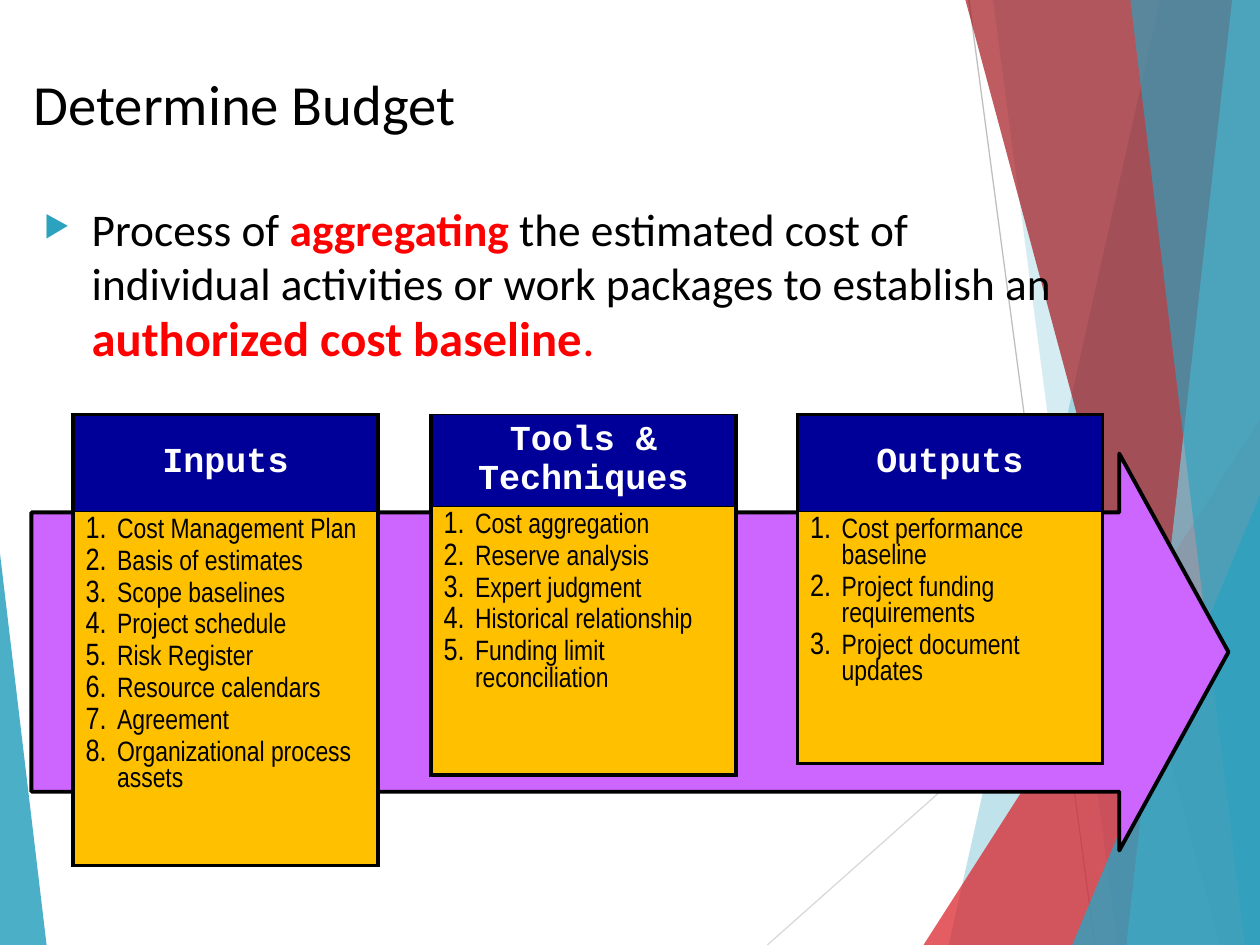
from dataclasses import dataclass

from lxml.etree import SubElement
from pptx import Presentation
from pptx.dml.color import RGBColor
from pptx.enum.shapes import MSO_CONNECTOR as Connector, MSO_SHAPE as Shape
from pptx.enum.text import MSO_ANCHOR as Anchor, PP_ALIGN as Align
from pptx.oxml.ns import qn
from pptx.util import Inches, Pt


@dataclass(frozen=True)
class Theme:
    black: str = "000000"
    white: str = "FFFFFF"
    emphasis: str = "FF0000"
    teal: str = "2DA2BF"
    pale_teal: str = "7ACBE0"
    red: str = "DA1F28"
    dark_red: str = "A3171E"
    gray: str = "BFBFBF"
    light_gray: str = "D9D9D9"
    arrow: str = "CC66FF"
    header: str = "000099"
    cell: str = "FFC000"
    text_font: str = "Calibri"
    header_font: str = "Courier New"
    list_font: str = "Arial Narrow"
    title_size: float = 32.4
    body_size: float = 25.9
    strong_size: float = 27.8
    header_size: float = 20
    list_size: float = 16
    thin: float = 1
    thick: float = 2.25


def add_text(paragraph, text, *, font, size, color, bold=False):
    run = paragraph.add_run()
    run.text = text
    run.font.name = font
    run.font.size = Pt(size)
    run.font.bold = bold
    run.font.color.rgb = RGBColor.from_string(color)


def add_color(parent, color):
    SubElement(parent, qn("a:srgbClr"), val=color)


def set_bullet(paragraph, indent, percent, character=None, color=None):
    """Hang a bullet character, or automatic numbers when none is given."""
    properties = paragraph._p.get_or_add_pPr()
    properties.set("marL", str(Inches(indent)))
    properties.set("indent", str(-Inches(indent)))
    if color:
        add_color(SubElement(properties, qn("a:buClr")), color)
    SubElement(properties, qn("a:buSzPct"), val=str(percent * 1000))
    if character:
        SubElement(properties, qn("a:buChar"), char=character)
    else:
        SubElement(properties, qn("a:buAutoNum"), type="arabicPeriod")


def set_cell(cell, fill, borders, color):
    """Borders are widths in points: left, right, top, bottom."""
    properties = cell._tc.get_or_add_tcPr()
    for side, width in zip(("lnL", "lnR", "lnT", "lnB"), borders):
        line = SubElement(properties, qn(f"a:{side}"), w=str(Pt(width)))
        add_color(SubElement(line, qn("a:solidFill")), color)
    cell.fill.solid()
    cell.fill.fore_color.rgb = RGBColor.from_string(fill)


class SlideBuilder:
    def __init__(self, slide, theme):
        self.slide = slide
        self.theme = theme

    def line(self, start, end, color):
        connector = self.slide.shapes.add_connector(
            Connector.STRAIGHT, *map(Inches, (*start, *end)))
        connector.line.color.rgb = RGBColor.from_string(color)
        connector.line.width = Pt(0.75)
        SubElement(connector._element.spPr, qn("a:effectLst"))

    def paint(self, shape, color, opacity=100):
        shape.shadow.inherit = False
        shape.fill.solid()
        shape.fill.fore_color.rgb = RGBColor.from_string(color)
        shape.line.fill.background()
        if opacity < 100:
            fill_color = shape._element.spPr.find(qn("a:solidFill"))[0]
            SubElement(fill_color, qn("a:alpha"), val=str(opacity * 1000))

    def panel(self, top_x, bottom_x, color, opacity):
        """Full-height band from a slanted left edge to the slide's right edge."""
        top, right, bottom = -0.01, 10, 7.5
        builder = self.slide.shapes.build_freeform(
            Inches(top_x), Inches(top), scale=1.0)
        corners = ((right, top), (right, bottom), (bottom_x, bottom))
        builder.add_line_segments([(Inches(x), Inches(y)) for x, y in corners])
        self.paint(builder.convert_to_shape(), color, opacity)

    def shape(self, kind, box, adjustments, color, opacity=100, outline=None):
        shape = self.slide.shapes.add_shape(kind, *map(Inches, box))
        for index, value in enumerate(adjustments):
            shape.adjustments[index] = value
        self.paint(shape, color, opacity)
        if outline:
            shape.line.color.rgb = RGBColor.from_string(outline)
            shape.line.width = Pt(self.theme.thick)

    def text_box(self, box, top_inset):
        """Return the first paragraph of a new wrapping text box."""
        frame = self.slide.shapes.add_textbox(*map(Inches, box)).text_frame
        frame.word_wrap = True
        frame.margin_top = Inches(top_inset)
        return frame.paragraphs[0]

    def list_table(self, left, heading, items, heights, top_border):
        theme = self.theme
        width = 2.42
        table = self.slide.shapes.add_table(
            2, 1, *map(Inches, (left, 3.29, width, sum(heights)))).table
        table.first_row = table.horz_banding = False
        for row, height in zip(table.rows, heights):
            row.height = Inches(height)

        header, body = table.cell(0, 0), table.cell(1, 0)
        sides = (theme.thick, theme.thick)
        set_cell(header, theme.header, (*sides, top_border, theme.thin), theme.black)
        set_cell(body, theme.cell, (*sides, theme.thin, theme.thick), theme.black)
        header.vertical_anchor = Anchor.MIDDLE
        header.margin_top = header.margin_bottom = Inches(0.03)
        paragraph = header.text_frame.paragraphs[0]
        paragraph.alignment = Align.CENTER
        add_text(paragraph, heading, font=theme.header_font,
                 size=theme.header_size, color=theme.white, bold=True)

        frame = body.text_frame
        for index, item in enumerate(items):
            paragraph = frame.add_paragraph() if index else frame.paragraphs[0]
            paragraph.space_before = Pt(0.2 * theme.list_size)
            set_bullet(paragraph, 0.25, 110)
            add_text(paragraph, item, font=theme.list_font,
                     size=theme.list_size, color=theme.black)


def add_backdrop(builder):
    theme = builder.theme
    builder.line((7.69, 0), (8.69, 7.5), theme.gray)
    builder.line((10, 4.03), (6.09, 7.5), theme.light_gray)
    builder.panel(9.21, 7.53, theme.teal, 30)
    builder.panel(7.88, 8.87, theme.teal, 20)
    builder.shape(Shape.ISOSCELES_TRIANGLE, (7.33, 3.33, 2.67, 4.17), [1], theme.red, 72)
    builder.panel(7.66, 9.68, theme.dark_red, 70)
    builder.panel(9.78, 8.94, theme.pale_teal, 70)
    builder.panel(8.97, 9.88, theme.teal, 65)
    builder.shape(Shape.ISOSCELES_TRIANGLE, (8.51, 3.93, 1.49, 3.57), [1], theme.teal, 80)
    builder.shape(Shape.ISOSCELES_TRIANGLE, (0, 4.39, 0.37, 3.11), [0], theme.teal, 85)


def add_wording(builder):
    theme = builder.theme
    title = builder.text_box((0.17, 0.5, 8.33, 0.5), 0.05)
    add_text(title, "Determine Budget", font=theme.text_font,
             size=theme.title_size, color=theme.black)

    body = builder.text_box((0.25, 1.54, 8.33, 1.25), 0.08)
    body.line_spacing = 0.98
    body.space_before = Pt(10)
    set_bullet(body, 0.38, 65, "▶", theme.teal)
    for text, size, color, bold in (
        ("Process of ", theme.body_size, theme.black, False),
        ("aggregating", theme.body_size, theme.emphasis, True),
        (" the estimated cost of individual activities or work packages to establish an ",
         theme.body_size, theme.black, False),
        ("authorized cost baseline", theme.strong_size, theme.emphasis, True),
        (".", theme.strong_size, theme.emphasis, False),
    ):
        add_text(body, text, font=theme.text_font, size=size, color=color, bold=bold)


def add_process(builder):
    theme = builder.theme
    builder.shape(Shape.RIGHT_ARROW, (0.25, 3.6, 9.5, 3.15), [0.704, 0.275],
                  theme.arrow, outline=theme.black)
    builder.list_table(0.58, "Inputs", (
        "Cost Management Plan", "Basis of estimates", "Scope baselines",
        "Project schedule", "Risk Register", "Resource calendars", "Agreement",
        "Organizational process assets"), (0.77, 2.26), theme.thick)
    builder.list_table(3.42, "Tools & Techniques", (
        "Cost aggregation", "Reserve analysis", "Expert judgment",
        "Historical relationship", "Funding limit reconciliation"),
        (0.73, 2.13), theme.thin)
    builder.list_table(6.33, "Outputs", (
        "Cost performance baseline", "Project funding requirements",
        "Project document updates"), (0.77, 2), theme.thick)


def main():
    presentation = Presentation()
    presentation.slide_width, presentation.slide_height = Inches(10), Inches(7.5)
    slide = presentation.slides.add_slide(presentation.slide_layouts[6])
    builder = SlideBuilder(slide, Theme())
    add_backdrop(builder)
    add_wording(builder)
    add_process(builder)
    presentation.save("out.pptx")


if __name__ == "__main__":
    main()
